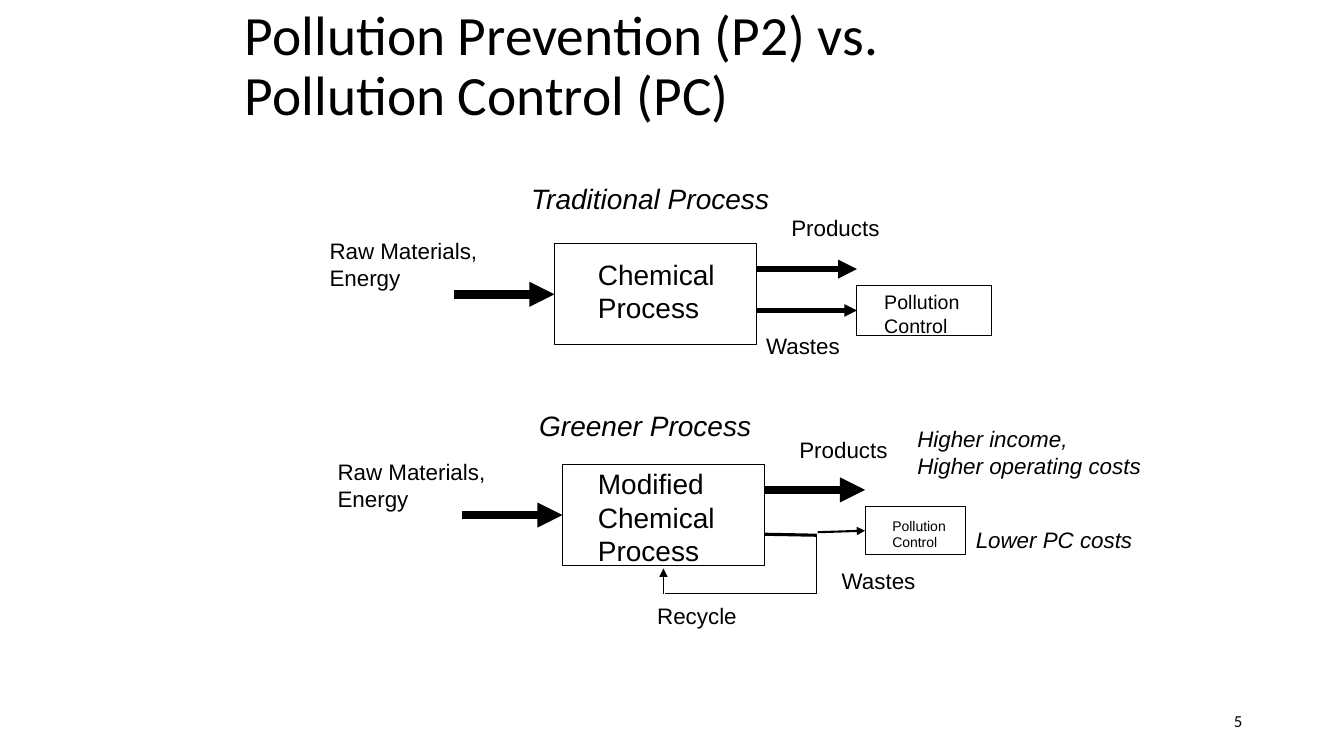
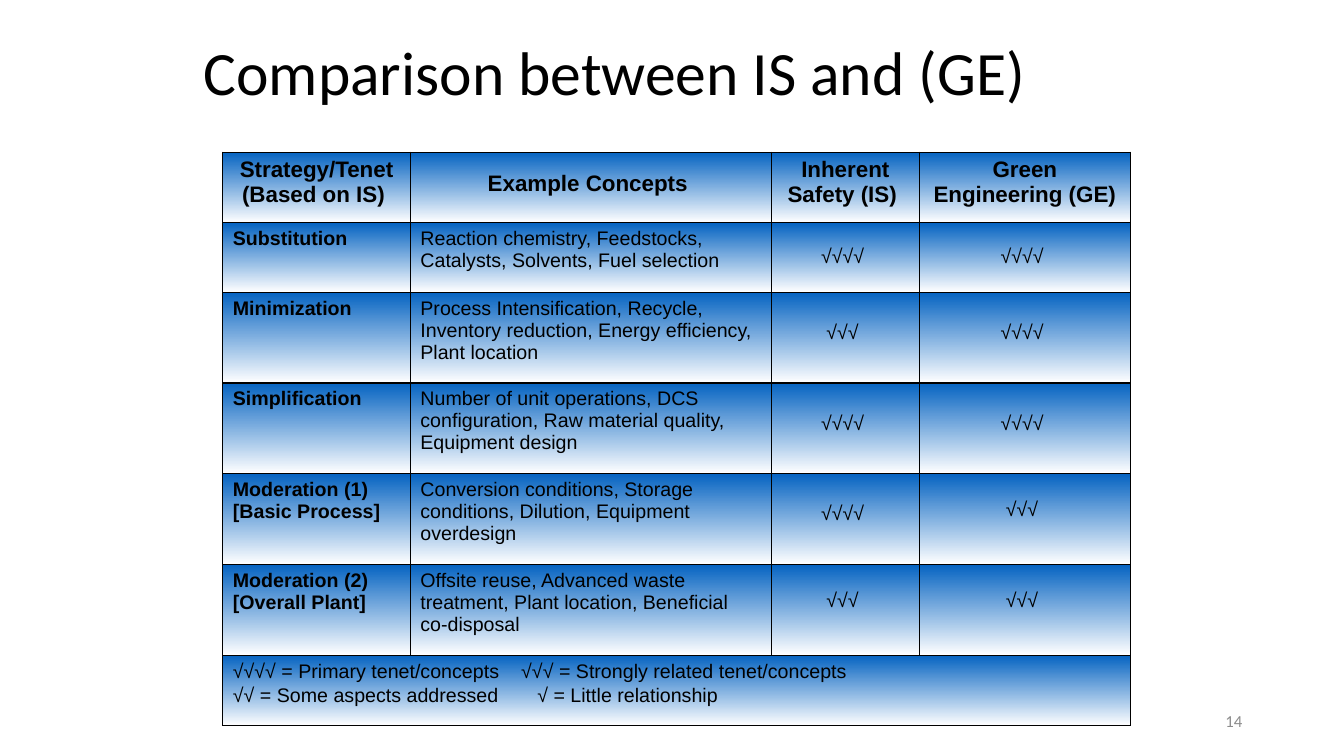
from lxml import etree
from pptx import Presentation
from pptx.dml.color import RGBColor
from pptx.enum.shapes import MSO_CONNECTOR, MSO_SHAPE
from pptx.enum.text import MSO_ANCHOR, MSO_AUTO_SIZE, PP_ALIGN
from pptx.oxml.ns import qn
from pptx.util import Pt

PX = 9144
BLACK = RGBColor(0x00, 0x00, 0x00)
GRAY = RGBColor(0x8C, 0x8C, 0x8C)
BLUE = RGBColor(0x05, 0x63, 0xC1)
WHITE = RGBColor(0xFF, 0xFF, 0xFF)
LEFT, CENTER, RIGHT = PP_ALIGN.LEFT, PP_ALIGN.CENTER, PP_ALIGN.RIGHT
TOP, MIDDLE = MSO_ANCHOR.TOP, MSO_ANCHOR.MIDDLE
STRAIGHT, RECTANGLE = MSO_CONNECTOR.STRAIGHT, MSO_SHAPE.RECTANGLE
NO_AUTOFIT = MSO_AUTO_SIZE.NONE
LEFT_SIDE = 1
HEADING_FONT, BODY_FONT = "Calibri", "Arial"

CONTROL_TITLE = ("Pollution Prevention (P2) vs.\vPollution Control (PC)", (233, 42, 850, 50), 39.6)
COMPARISON_TITLE = ("Comparison between IS and (GE)", (192, 0, 942, 150), 44)
NUMBER_AREA = (942, 695, 300, 40)

UNITS = {
    "traditional": ("Chemical\nProcess", (550, 242, 200, 100), 20, (43, 13)),
    "traditional control": ("Pollution\nControl", (850, 283, 133, 50), 14, (27, 5)),
    "greener": ("Modified\nChemical\nProcess", (558, 461, 200, 100), 20, (35, 2)),
    "greener control": ("Pollution\nControl", (858, 503, 100, 47), 10, (27, 10)),
}
FLOWS = [
    ((750, 267), (850, 267), 4.5, True, None),
    ((750, 308), (850, 308), 3, True, "traditional control"),
    ((450, 292), (550, 292), 6, True, "traditional"),
    ((758, 486), (858, 486), 6, True, None),
    ((811, 528), (858, 528), 1.5, True, "greener control"),
    ((458, 511), (558, 511), 6, True, "greener"),
    ((758, 530), (810, 531), 2.25, False, None),
    ((810, 530), (810, 589), 0.75, False, None),
    ((810, 589), (660, 589), 0.75, False, None),
    ((658, 589), (658, 564), 0.75, True, None),
]
LABELS = [
    ("Raw Materials,\nEnergy", (317, 230, 175, 64)),
    ("Products", (775, 208, 109, 37)),
    ("Wastes", (750, 325, 98, 37)),
    ("Raw Materials,\nEnergy", (325, 450, 175, 64)),
    ("Products", (783, 428, 109, 37)),
    ("Wastes", (825, 558, 98, 37)),
    ("Recycle", (642, 592, 100, 37)),
]
PROCESS_NAMES = [
    ("Traditional Process", (517, 175, 283, 43)),
    ("Greener Process", (525, 400, 267, 43)),
]
OUTCOMES = [
    ("Higher income,\nHigher operating costs", (900, 417, 267, 64)),
    ("Lower PC costs", (958, 517, 177, 37)),
]

TABLE_AREA = (221, 151, 900, 569)
COLUMN_WIDTHS = (186, 358, 147, 209)
ROW_HEIGHTS = (70, 69, 90, 90, 90, 90, 70)
HEADINGS = ("Strategy/Tenet (Based on IS) ", "Example Concepts ",
            "Inherent Safety (IS) ", "Green Engineering (GE)")
HEADING_TOPS = (5, 19, 5, 5)
TENETS = [
    ("Substitution", "Reaction chemistry, Feedstocks, Catalysts, Solvents, Fuel selection",
     ("√√√√ ", 23), ("√√√√ ", 23)),
    ("Minimization", "Process Intensification, Recycle, Inventory reduction, "
     "Energy efficiency, Plant location", ("√√√ ", 29), ("√√√√ ", 29)),
    ("Simplification", "Number of unit operations, DCS configuration, "
     "Raw material quality, Equipment design", ("√√√√ ", 29), ("√√√√ ", 29)),
    ("Moderation (1) [Basic Process]", "Conversion conditions, Storage conditions, "
     "Dilution, Equipment overdesign", ("√√√√ ", 29), ("√√√ ", 25)),
    ("Moderation (2) [Overall Plant]", "Offsite reuse, Advanced waste treatment, "
     "Plant location, Beneficial co-disposal", ("√√√ ", 25), ("√√√ ", 25)),
]
LEGEND = [
    ("√√√√ = Primary tenet/concepts\t√√√ = Strongly related tenet/concepts", 286),
    ("√√ = Some aspects addressed\t√ = Little relationship", 302),
]


def emu(lengths):
    return [length * PX for length in lengths]


def style(paragraph, size, font=BODY_FONT, color=BLACK, align=LEFT, bold=False, italic=False):
    paragraph.alignment = align
    paragraph.font.name = font
    paragraph.font.size = Pt(size)
    paragraph.font.color.rgb = color
    paragraph.font.bold = bold
    paragraph.font.italic = italic


def write(frame, text, size, anchor=TOP, **look):
    frame.word_wrap = True
    frame.vertical_anchor = anchor
    frame.text = text
    for paragraph in frame.paragraphs:
        style(paragraph, size, **look)


def add_label(slide, text, area, size, **look):
    frame = slide.shapes.add_textbox(*emu(area)).text_frame
    frame.margin_right = 0 if look.get("align") != RIGHT else 10 * PX
    write(frame, text, size, **look)


def add_titled_slide(deck, heading, number, number_color):
    text, area, size = heading
    slide = deck.slides.add_slide(deck.slide_layouts[5])
    title = slide.shapes.title
    title.left, title.top, title.width, title.height = emu(area)
    write(title.text_frame, text, size, anchor=MIDDLE, font=HEADING_FONT)
    title.text_frame.auto_size = NO_AUTOFIT
    title.text_frame.paragraphs[0].line_spacing = 0.9
    add_label(slide, number, NUMBER_AREA, 12, anchor=MIDDLE,
              font=HEADING_FONT, color=number_color, align=RIGHT)
    return slide


def add_unit(slide, text, area, size, inset):
    unit = slide.shapes.add_shape(RECTANGLE, *emu(area))
    unit.shadow.inherit = False
    unit.fill.background()
    unit.line.color.rgb = BLACK
    unit.line.width = Pt(0.75)
    frame = unit.text_frame
    frame.margin_left, frame.margin_top = emu(inset)
    frame.margin_right = frame.margin_bottom = 0
    write(frame, text, size)
    return unit


def add_flow(slide, start, end, width, arrow, target):
    flow = slide.shapes.add_connector(STRAIGHT, *emu(start + end))
    flow.line.color.rgb = BLACK
    flow.line.width = Pt(width)
    properties = flow._element.spPr
    if arrow:
        etree.SubElement(properties.find(qn("a:ln")), qn("a:tailEnd"), type="triangle")
    etree.SubElement(properties, qn("a:effectLst"))
    if target is not None:
        flow.end_connect(target, LEFT_SIDE)


def build_control_slide(deck):
    slide = add_titled_slide(deck, CONTROL_TITLE, "5", BLACK)
    units = {name: add_unit(slide, *unit) for name, unit in UNITS.items()}
    for start, end, width, arrow, target in FLOWS:
        add_flow(slide, start, end, width, arrow, units.get(target))
    for group, size, italic in ((LABELS, 16, False), (PROCESS_NAMES, 20, True),
                                (OUTCOMES, 16, True)):
        for text, area in group:
            add_label(slide, text, area, size, italic=italic)


def paint_cell(cell):
    properties = cell._tc.get_or_add_tcPr()
    for side in ("a:lnL", "a:lnR", "a:lnT", "a:lnB"):
        border = etree.SubElement(properties, qn(side), w=str(Pt(1)))
        solid = etree.SubElement(border, qn("a:solidFill"))
        etree.SubElement(solid, qn("a:srgbClr"), val=str(BLACK))
    cell.fill.gradient()
    cell.fill.gradient_angle = 270
    for stop, position, color in zip(cell.fill.gradient_stops, (0, 1), (BLUE, WHITE)):
        stop.position = position
        stop.color.rgb = color


def fill_cell(cell, text, size, top=5, **look):
    cell.margin_top = top * PX
    write(cell.text_frame, text, size, **look)


def add_tab_stop(paragraph, position):
    tabs = etree.SubElement(paragraph._p.get_or_add_pPr(), qn("a:tabLst"))
    etree.SubElement(tabs, qn("a:tab"), pos=str(position * PX), algn="l")


def fill_legend(cell):
    frame = cell.text_frame
    for index, (text, tab) in enumerate(LEGEND):
        paragraph = frame.add_paragraph() if index else frame.paragraphs[0]
        paragraph.text = text
        if index:
            paragraph.space_before = Pt(2)
        add_tab_stop(paragraph, tab)
        style(paragraph, 14)


def build_comparison_slide(deck):
    slide = add_titled_slide(deck, COMPARISON_TITLE, "14", GRAY)
    table = slide.shapes.add_table(len(ROW_HEIGHTS), len(COLUMN_WIDTHS),
                                   *emu(TABLE_AREA)).table
    table.first_row = table.horz_banding = False
    for column, width in zip(table.columns, COLUMN_WIDTHS):
        column.width = width * PX
    for row, height in zip(table.rows, ROW_HEIGHTS):
        row.height = height * PX
    for cell in table.iter_cells():
        paint_cell(cell)

    for column, (text, top) in enumerate(zip(HEADINGS, HEADING_TOPS)):
        fill_cell(table.cell(0, column), text, 16, top, align=CENTER, bold=True)
    for row, (tenet, concepts, *ratings) in enumerate(TENETS, start=1):
        fill_cell(table.cell(row, 0), tenet, 14, bold=True)
        fill_cell(table.cell(row, 1), concepts, 14)
        for column, (marks, top) in enumerate(ratings, start=2):
            fill_cell(table.cell(row, column), marks, 14, top, align=CENTER)

    last = len(ROW_HEIGHTS) - 1
    legend = table.cell(last, 0)
    legend.merge(table.cell(last, len(COLUMN_WIDTHS) - 1))
    fill_legend(legend)


def main():
    deck = Presentation()
    deck.slide_width, deck.slide_height = emu((1333, 750))
    build_control_slide(deck)
    build_comparison_slide(deck)
    deck.save("out.pptx")


if __name__ == "__main__":
    main()
